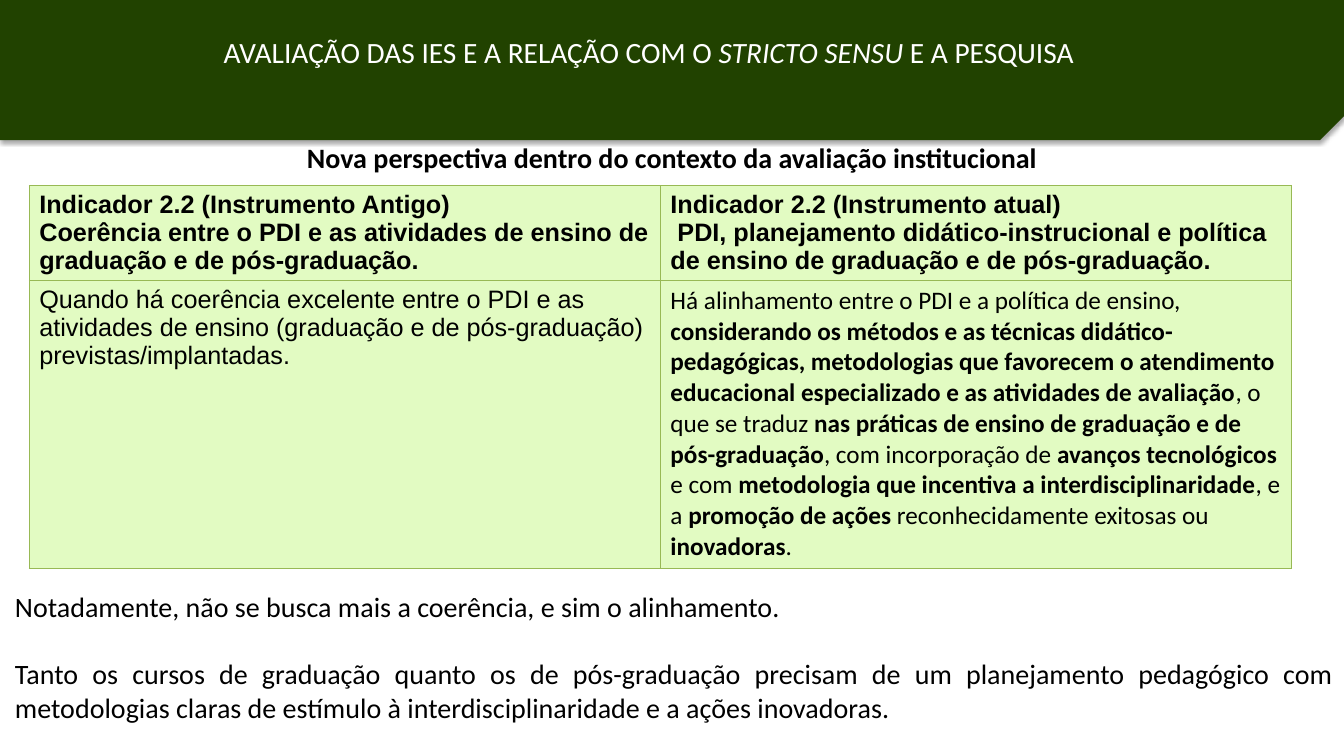
from lxml import etree
from pptx import Presentation
from pptx.dml.color import RGBColor
from pptx.enum.shapes import MSO_SHAPE
from pptx.enum.text import PP_ALIGN
from pptx.oxml import parse_xml
from pptx.oxml.ns import nsdecls, qn
from pptx.util import Inches, Pt

BANNER_SHAPE = MSO_SHAPE.SNIP_1_RECTANGLE
LEFT, CENTER, JUSTIFY = PP_ALIGN.LEFT, PP_ALIGN.CENTER, PP_ALIGN.JUSTIFY

DARK_GREEN = RGBColor(0x21, 0x42, 0x00)
PALE_GREEN = RGBColor(0xE2, 0xFB, 0xC2)
BORDER_GREEN = RGBColor(0x98, 0xB9, 0x55)
BLACK = RGBColor(0x00, 0x00, 0x00)
WHITE = RGBColor(0xFF, 0xFF, 0xFF)

BODY_FONT, TABLE_FONT = "Calibri", "Arial"

OLD_HEADER = [
    "*Indicador 2.2 (Instrumento Antigo)*",
    "*Coerência entre o PDI e as atividades de ensino de graduação e de pós-graduação.*",
]
NEW_HEADER = [
    "*Indicador 2.2 (Instrumento atual)*",
    "* PDI, planejamento didático-instrucional e política de ensino de graduação e de pós-graduação.*",
]
OLD_TEXT = [
    "Quando há coerência excelente entre o PDI e as atividades de ensino "
    "(graduação e de pós-graduação) previstas/implantadas."
]
NEW_TEXT = [
    "Há alinhamento entre o PDI e a política de ensino, *considerando os métodos e as "
    "técnicas didático-pedagógicas, metodologias que favorecem o atendimento educacional "
    "especializado e as atividades de avaliação*, o que se traduz *nas práticas de ensino "
    "de graduação e de pós-graduação*, com incorporação de *avanços tecnológicos *e com "
    "*metodologia que incentiva a interdisciplinaridade*, e a *promoção de ações "
    "*reconhecidamente exitosas ou *inovadoras*."
]
CONCLUSIONS = [
    "Notadamente, não se busca mais a coerência, e sim o alinhamento.",
    "Tanto os cursos de graduação quanto os de pós-graduação precisam de um planejamento "
    "pedagógico com metodologias claras de estímulo à interdisciplinaridade e a ações inovadoras.",
]


class SlideBuilder:
    def __init__(self, slide):
        self.slide = slide

    def fill_text(self, text_frame, lines, size, color=BLACK, font=BODY_FONT, align=LEFT, gap=0):
        """Add one paragraph per line; *...* marks bold and _..._ marks italic."""
        text_frame.word_wrap = True
        for index, line in enumerate(lines):
            paragraph = text_frame.add_paragraph() if index else text_frame.paragraphs[0]
            paragraph.alignment = align
            paragraph.space_before = Pt(gap if index else 0)
            for bold_index, part in enumerate(line.split("*")):
                for italic_index, piece in enumerate(part.split("_")):
                    if not piece:
                        continue
                    run = paragraph.add_run()
                    run.text = piece
                    run.font.name = font
                    run.font.size = Pt(size)
                    run.font.color.rgb = color
                    run.font.bold = bold_index % 2 == 1
                    run.font.italic = italic_index % 2 == 1

    def banner(self, left, top, width, height):
        shape = self.slide.shapes.add_shape(
            BANNER_SHAPE, Inches(left), Inches(top), Inches(width), Inches(height))
        shape.fill.solid()
        shape.fill.fore_color.rgb = DARK_GREEN
        shape.line.fill.background()
        properties = shape.element.spPr
        properties.find(qn("a:xfrm")).set("flipV", "1")
        properties.append(parse_xml(
            f'<a:effectLst {nsdecls("a")}>'
            f'<a:outerShdw blurRad="{Pt(3.1)}" dist="{Pt(1.8)}" dir="5400000" rotWithShape="0">'
            '<a:srgbClr val="000000"><a:alpha val="35000"/></a:srgbClr>'
            '</a:outerShdw></a:effectLst>'))

    def text(self, left, top, width, height, lines, size, **style):
        box = self.slide.shapes.add_textbox(
            Inches(left), Inches(top), Inches(width), Inches(height))
        self.fill_text(box.text_frame, lines, size, **style)

    def border(self, cell):
        properties = cell._tc.get_or_add_tcPr()
        for position, side in enumerate(("lnL", "lnR", "lnT", "lnB")):
            line = etree.Element(qn(f"a:{side}"), w=str(Pt(0.75)))
            fill = etree.SubElement(line, qn("a:solidFill"))
            etree.SubElement(fill, qn("a:srgbClr"), val=str(BORDER_GREEN))
            properties.insert(position, line)

    def table(self, left, top, column_width, row_heights, rows):
        """Each cell is a pair of its lines and its font."""
        columns = len(rows[0])
        table = self.slide.shapes.add_table(
            len(rows), columns, Inches(left), Inches(top),
            Inches(column_width * columns), Inches(sum(row_heights))).table
        table.horz_banding = False
        for column in table.columns:
            column.width = Inches(column_width)
        for row, height, contents in zip(table.rows, row_heights, rows):
            row.height = Inches(height)
            for cell, (lines, font) in zip(row.cells, contents):
                cell.fill.solid()
                cell.fill.fore_color.rgb = PALE_GREEN
                self.border(cell)
                self.fill_text(cell.text_frame, lines, 18, font=font)


def main():
    presentation = Presentation()
    presentation.slide_width = Inches(13.33)
    presentation.slide_height = Inches(7.5)
    builder = SlideBuilder(presentation.slides.add_slide(presentation.slide_layouts[6]))

    builder.banner(0, -0.03, 13.33, 1.42)
    builder.table(0.29, 1.84, 6.26, (0.94, 2.86), [
        [(OLD_HEADER, TABLE_FONT), (NEW_HEADER, TABLE_FONT)],
        [(OLD_TEXT, TABLE_FONT), (NEW_TEXT, BODY_FONT)],
    ])
    builder.text(0.05, 5.8, 13.27, 1.45, CONCLUSIONS, 20, align=JUSTIFY, gap=24)
    builder.text(2.65, 1.34, 8.03, 0.44,
                 ["*Nova perspectiva dentro do contexto da avaliação institucional*"],
                 20, align=CENTER)
    builder.text(2.12, 0.29, 8.8, 0.45,
                 ["AVALIAÇÃO DAS IES E A RELAÇÃO COM O _STRICTO SENSU _E A PESQUISA"],
                 21, color=WHITE)
    presentation.save("out.pptx")


if __name__ == "__main__":
    main()
